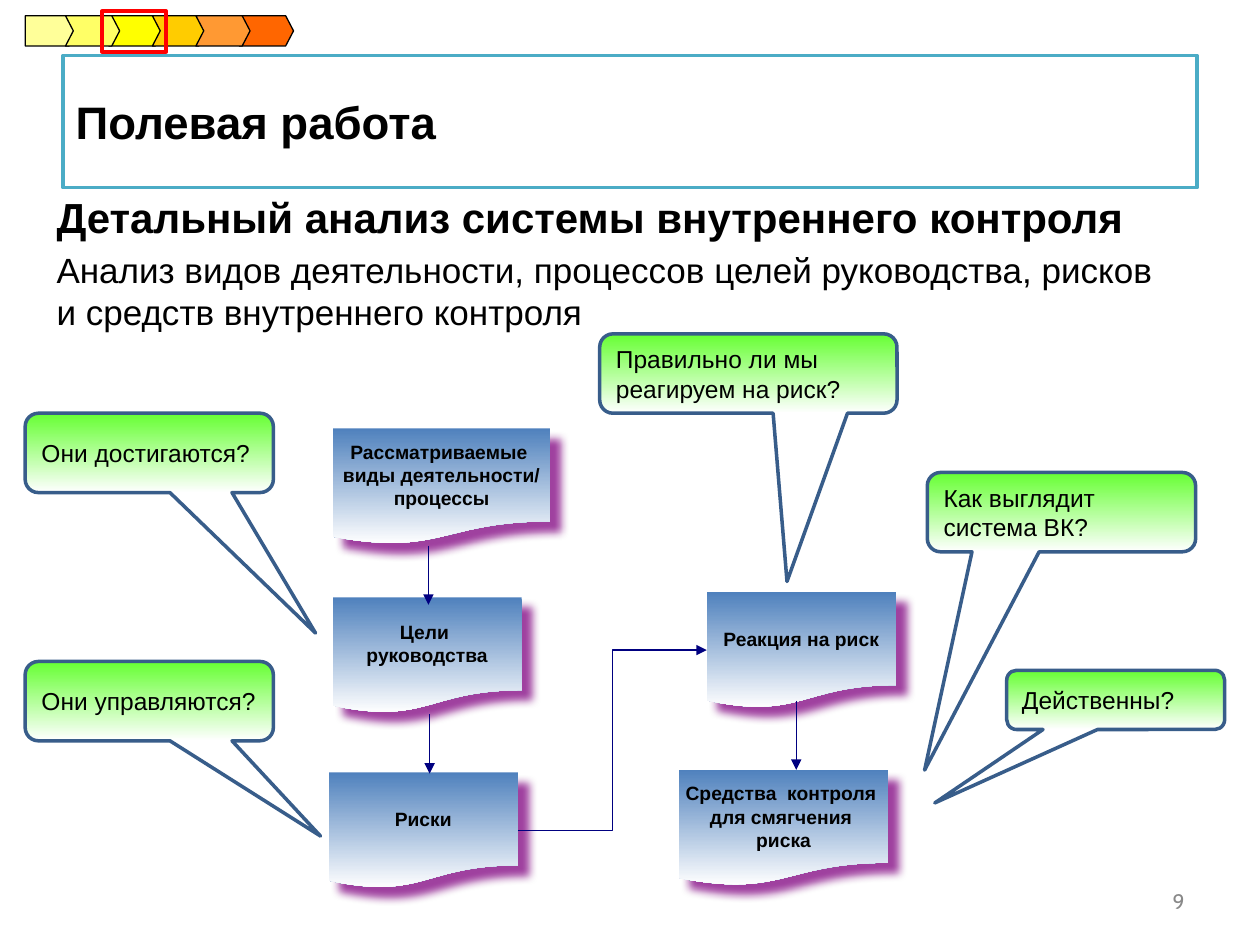
from dataclasses import dataclass

from lxml import etree
from pptx import Presentation
from pptx.dml.color import RGBColor
from pptx.enum.shapes import MSO_CONNECTOR, MSO_SHAPE
from pptx.enum.text import MSO_ANCHOR, MSO_AUTO_SIZE, PP_ALIGN
from pptx.oxml.ns import qn
from pptx.util import Inches, Pt

DOC = MSO_SHAPE.FLOWCHART_DOCUMENT
CALLOUT = MSO_SHAPE.ROUNDED_RECTANGULAR_CALLOUT
PLATE, CHEVRON, RECT = MSO_SHAPE.PENTAGON, MSO_SHAPE.CHEVRON, MSO_SHAPE.RECTANGLE
STRAIGHT, ELBOW = MSO_CONNECTOR.STRAIGHT, MSO_CONNECTOR.ELBOW
LEFT, CENTER, RIGHT = PP_ALIGN.LEFT, PP_ALIGN.CENTER, PP_ALIGN.RIGHT
MIDDLE, NO_FIT = MSO_ANCHOR.MIDDLE, MSO_AUTO_SIZE.NONE
COLS, ROWS = 100, 75


@dataclass(frozen=True)
class Theme:
    font: str = "Arial"
    number_font: str = "Cabin"
    ink: str = "000000"
    gray: str = "898989"
    paper: str = "FFFFFF"
    frame: str = "4BACC6"
    doc: str = "4F81BD"
    shade: str = "800080"
    call: str = "66FF33"
    edge: str = "385D8A"
    arrow: str = "000080"
    mark: str = "FF0000"
    title: int = 26
    head: int = 24
    body: int = 20
    ask: int = 14
    number: int = 12
    label: int = 11


THEME = Theme()


def rgb(code):
    return RGBColor.from_string(code)


def grid(*units):
    return [Inches(10 / COLS * unit) for unit in units]


def style(par, size, align=LEFT, bold=False, font=THEME.font, color=THEME.ink):
    par.alignment = align
    for run in par.runs:
        run.font.name = font
        run.font.size = Pt(size)
        run.font.bold = bold
        run.font.color.rgb = rgb(color)


def outline(shape, color, width):
    shape.line.color.rgb = rgb(color)
    shape.line.width = Pt(width)


def fade(shape, color):
    shape.fill.gradient()
    shape.fill.gradient_angle = 270
    for stop, code, place in zip(shape.fill.gradient_stops, (color, THEME.paper), (0, 1)):
        stop.color.rgb = rgb(code)
        stop.position = place


def add_shape(slide, kind, box, *tweaks):
    shape = slide.shapes.add_shape(kind, *grid(*box))
    shape.shadow.inherit = False
    for spot, value in enumerate(tweaks):
        shape.adjustments[spot] = value
    return shape


def add_title(slide, text, box):
    title = slide.shapes.title
    title.left, title.top, title.width, title.height = grid(*box)
    title.fill.solid()
    title.fill.fore_color.rgb = rgb(THEME.paper)
    outline(title, THEME.frame, 2)
    frame = title.text_frame
    frame.text = text
    frame.auto_size = NO_FIT
    frame.vertical_anchor = MIDDLE
    style(frame.paragraphs[0], THEME.title, bold=True)


def add_text(slide, text, box):
    frame = slide.shapes.add_textbox(*grid(*box)).text_frame
    frame.word_wrap = True
    frame.text = text
    return frame


def add_body(slide, text, box):
    head, body = add_text(slide, text, box).paragraphs
    for par, size, bold in ((head, THEME.head, True), (body, THEME.body, False)):
        par.space_before = Pt(size / 5)
        style(par, size, bold=bold)


def add_number(slide, text, box):
    frame = add_text(slide, text, box)
    frame.vertical_anchor = MIDDLE
    style(frame.paragraphs[0], THEME.number, RIGHT, font=THEME.number_font, color=THEME.gray)


def add_doc(slide, text, left, top, width):
    shape = add_shape(slide, DOC, (left, top, width, 9.2))
    fade(shape, THEME.doc)
    shape.line.fill.background()
    effects = shape.element.spPr.find(qn("a:effectLst"))
    shadow = etree.SubElement(effects, qn("a:outerShdw"), blurRad=str(Pt(5)),
                              dist=str(Pt(8.5)), dir="2700000", algn="ctr", rotWithShape="0")
    color = etree.SubElement(shadow, qn("a:srgbClr"), val=THEME.shade)
    etree.SubElement(color, qn("a:alpha"), val="75000")
    frame = shape.text_frame
    frame.text = text
    frame.word_wrap = False
    frame.vertical_anchor = MIDDLE
    for par in frame.paragraphs:
        style(par, THEME.label, CENTER, bold=True)
    return shape


def add_call(slide, text, box, tip):
    shape = add_shape(slide, CALLOUT, box, *tip, 0.167)
    fade(shape, THEME.call)
    outline(shape, THEME.edge, 2)
    shape.text_frame.text = text
    shape.text_frame.vertical_anchor = MIDDLE
    style(shape.text_frame.paragraphs[0], THEME.ask)


def add_arrow(slide, kind, ends):
    arrow = slide.shapes.add_connector(kind, *grid(*ends))
    outline(arrow, THEME.arrow, 0.75)
    etree.SubElement(arrow.line._get_or_add_ln(), qn("a:tailEnd"), type="triangle")
    etree.SubElement(arrow.element.spPr, qn("a:effectLst"))
    return arrow


def add_step(slide, kind, left, width, color):
    shape = add_shape(slide, kind, (left, 1.25, width, 2.4), 0.26)
    shape.fill.solid()
    shape.fill.fore_color.rgb = rgb(color)
    outline(shape, THEME.ink, 0.75)


def add_steps(slide):
    add_step(slide, PLATE, 2, 4.1, "FFFF99")
    for spot, color in ((1, "FFFF00"), (2, "FFCC00"), (4, "FF6600"),
                        (3, "FF9933"), (0, "FFFF66")):
        add_step(slide, CHEVRON, 5.2 + 3.45 * spot, 4.3, color)
    mark = add_shape(slide, RECT, (8.1, 0.9, 5.1, 3.2))
    mark.fill.background()
    outline(mark, THEME.mark, 2.25)


def main():
    deck = Presentation()
    deck.slide_width, deck.slide_height = grid(COLS, ROWS)
    slide = deck.slides.add_slide(deck.slide_layouts[5])

    add_title(slide, "Полевая работа", (5, 4.4, 90, 10.5))
    add_number(slide, "9", (71.7, 69.5, 23.3, 4))
    add_body(slide, "Детальный анализ системы внутреннего контроля\n"
             "Анализ видов деятельности, процессов целей руководства, "
             "рисков и средств внутреннего контроля", (3.5, 14.7, 89.8, 14.2))

    reply = add_doc(slide, "Реакция на риск", 56.1, 47, 15)
    add_doc(slide, "Средства  контроля \nдля смягчения \nриска", 53.9, 61.1, 16.6)
    add_doc(slide, "Рассматриваемые \nвиды деятельности/\nпроцессы", 26.4, 34, 17.3)
    add_doc(slide, "Цели \nруководства", 26.4, 47.4, 15)
    risk = add_doc(slide, "Риски", 26.1, 61.3, 15)

    for x, top, end in ((34, 43.3, 48), (34.1, 56.7, 61.4), (63.2, 55.6, 61.1)):
        add_arrow(slide, STRAIGHT, (x, top, x, end))
    bend = add_arrow(slide, ELBOW, (41.1, 65.9, 56.1, 51.6))
    bend.begin_connect(risk, 3)
    bend.end_connect(reply, 1)

    calls = (
        ("Как выглядит система ВК?", (73.6, 37.5, 21.3, 6.3), (-0.51, 3.25)),
        ("Действенны?", (79.9, 53.2, 17.3, 4.7), (-0.83, 1.74)),
        ("Они управляются?", (2, 52.5, 19.7, 6.3), (0.69, 1.7)),
        ("Они достигаются?", (2, 32.8, 19.7, 6.3), (0.67, 2.27)),
        ("Правильно ли мы реагируем на риск?", (47.6, 26.5, 23.6, 6.3), (0.13, 2.62)),
    )
    for text, box, tip in calls:
        add_call(slide, text, box, tip)
    add_steps(slide)
    deck.save("out.pptx")


if __name__ == "__main__":
    main()
